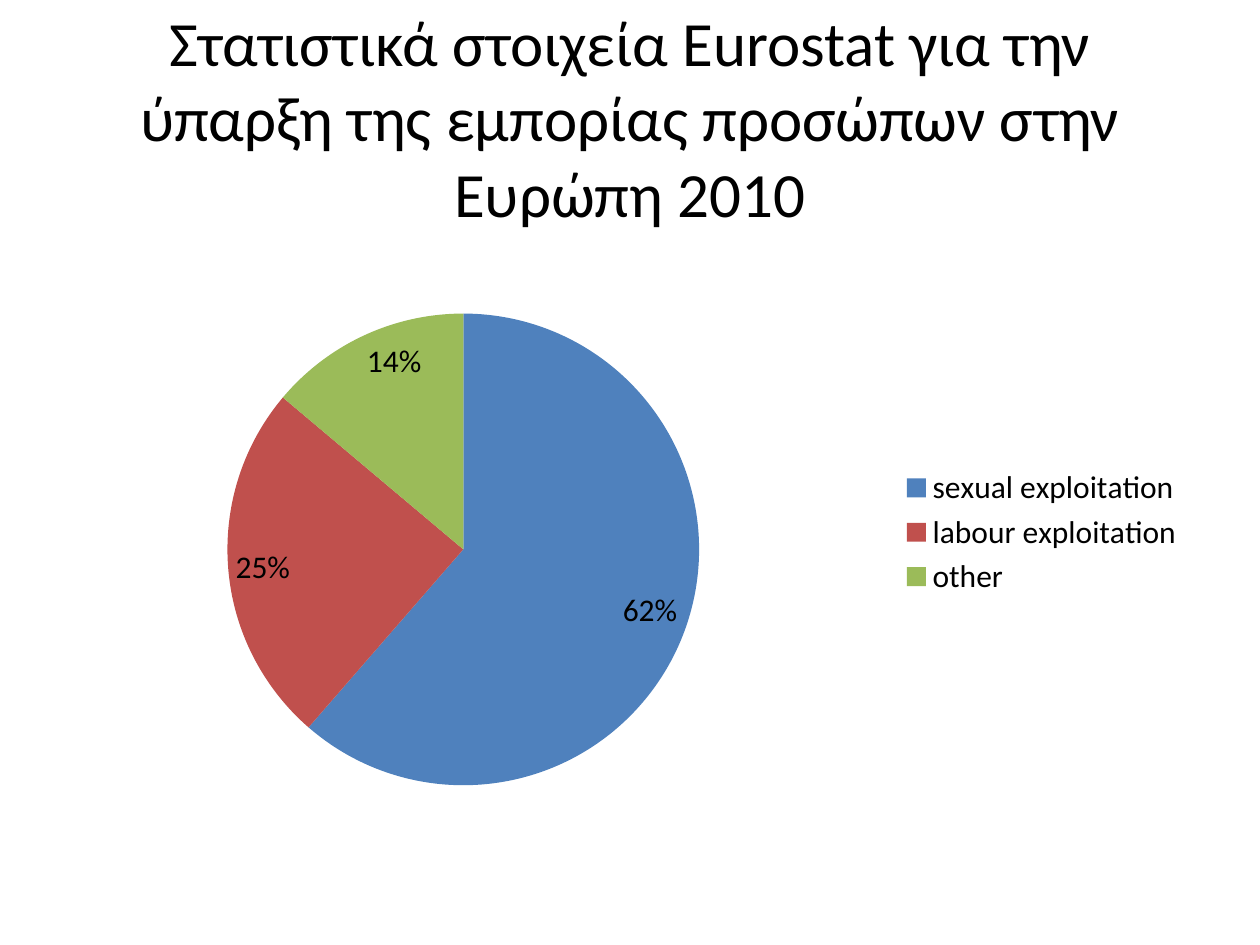
from lxml.etree import SubElement
from pptx import Presentation
from pptx.chart.data import CategoryChartData
from pptx.dml.color import RGBColor as RGB
from pptx.enum.chart import XL_CHART_TYPE as ChartType, XL_LABEL_POSITION as LabelPos, XL_LEGEND_POSITION as LegendPos
from pptx.enum.text import MSO_ANCHOR as Anchor, PP_ALIGN as Align
from pptx.oxml.ns import qn
from pptx.util import Inches, Pt

TITLE = "Στατιστικά στοιχεία Εurostat για την ύπαρξη της εμπορίας προσώπων στην Ευρώπη 2010"
SHARES = [
    ("sexual exploitation", 0.62, "4F81BD"),
    ("labour exploitation", 0.25, "C0504D"),
    ("other", 0.14, "9BBB59"),
]
THEME = {"font": "Calibri", "text": RGB.from_string("000000"), "title": Pt(36), "chart": Pt(18)}
SLIDE_W, SLIDE_H = Inches(10), Inches(7.5)
TITLE_BOX = (0.05, 0.04, 0.9, 1 / 6)
CHART_BOX = (0.05, 7 / 30, 0.9, 0.66)
PIE_AREA = {"x": 0.145, "y": 0.149, "w": 0.416, "h": 0.757}


def place(x, y, w, h):
    return [round(v) for v in (x * SLIDE_W, y * SLIDE_H, w * SLIDE_W, h * SLIDE_H)]


def style(font, size):
    font.name, font.size, font.color.rgb = THEME["font"], size, THEME["text"]


def add_title(s):
    tf = s.shapes.add_textbox(*place(*TITLE_BOX)).text_frame
    tf.word_wrap = True
    tf.vertical_anchor = Anchor.MIDDLE
    p = tf.paragraphs[0]
    p.alignment = Align.CENTER
    r = p.add_run()
    r.text = TITLE
    style(r.font, THEME["title"])


def set_pie_area(chart):
    plot_area = chart.plots[0]._element.getparent()
    layout = plot_area.find(qn("c:layout"))
    if layout is None:
        layout = SubElement(plot_area, qn("c:layout"))
        plot_area.insert(0, layout)
    manual = SubElement(layout, qn("c:manualLayout"))
    settings = {"layoutTarget": "inner", "xMode": "edge", "yMode": "edge", **PIE_AREA}
    for tag, value in settings.items():
        SubElement(manual, qn(f"c:{tag}")).set("val", str(value))


def add_pie(s):
    data = CategoryChartData(number_format="0%")
    data.categories = [name for name, _, _ in SHARES]
    data.add_series("Series 1", [value for _, value, _ in SHARES])
    chart = s.shapes.add_chart(ChartType.PIE, *place(*CHART_BOX), data).chart
    style(chart.font, THEME["chart"])
    chart.has_title = False
    chart.has_legend = True
    chart.legend.position = LegendPos.RIGHT
    chart.legend.include_in_layout = False
    plot = chart.plots[0]
    plot.vary_by_categories = True
    for i, (_, _, color) in enumerate(SHARES):
        fill = plot.series[0].points[i].format.fill
        fill.solid()
        fill.fore_color.rgb = RGB.from_string(color)
    labels = plot.series[0].data_labels
    labels.show_value = True
    labels.position = LabelPos.INSIDE_END
    labels.number_format = "0%"
    labels.number_format_is_linked = False
    style(labels.font, THEME["chart"])
    set_pie_area(chart)


def main():
    prs = Presentation()
    prs.slide_width, prs.slide_height = SLIDE_W, SLIDE_H
    s = prs.slides.add_slide(prs.slide_layouts[6])
    add_title(s)
    add_pie(s)
    prs.save("out.pptx")


if __name__ == "__main__":
    main()
